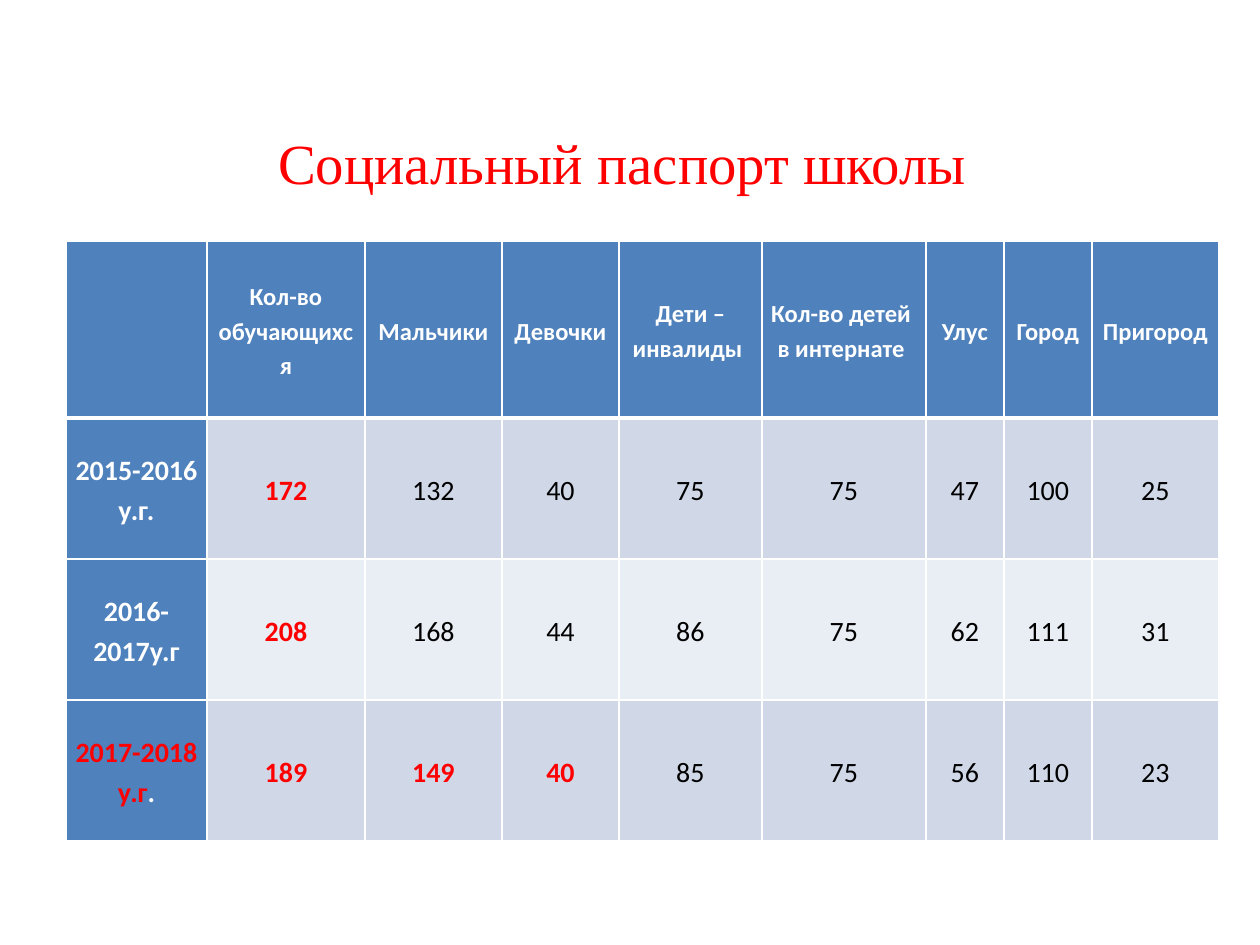
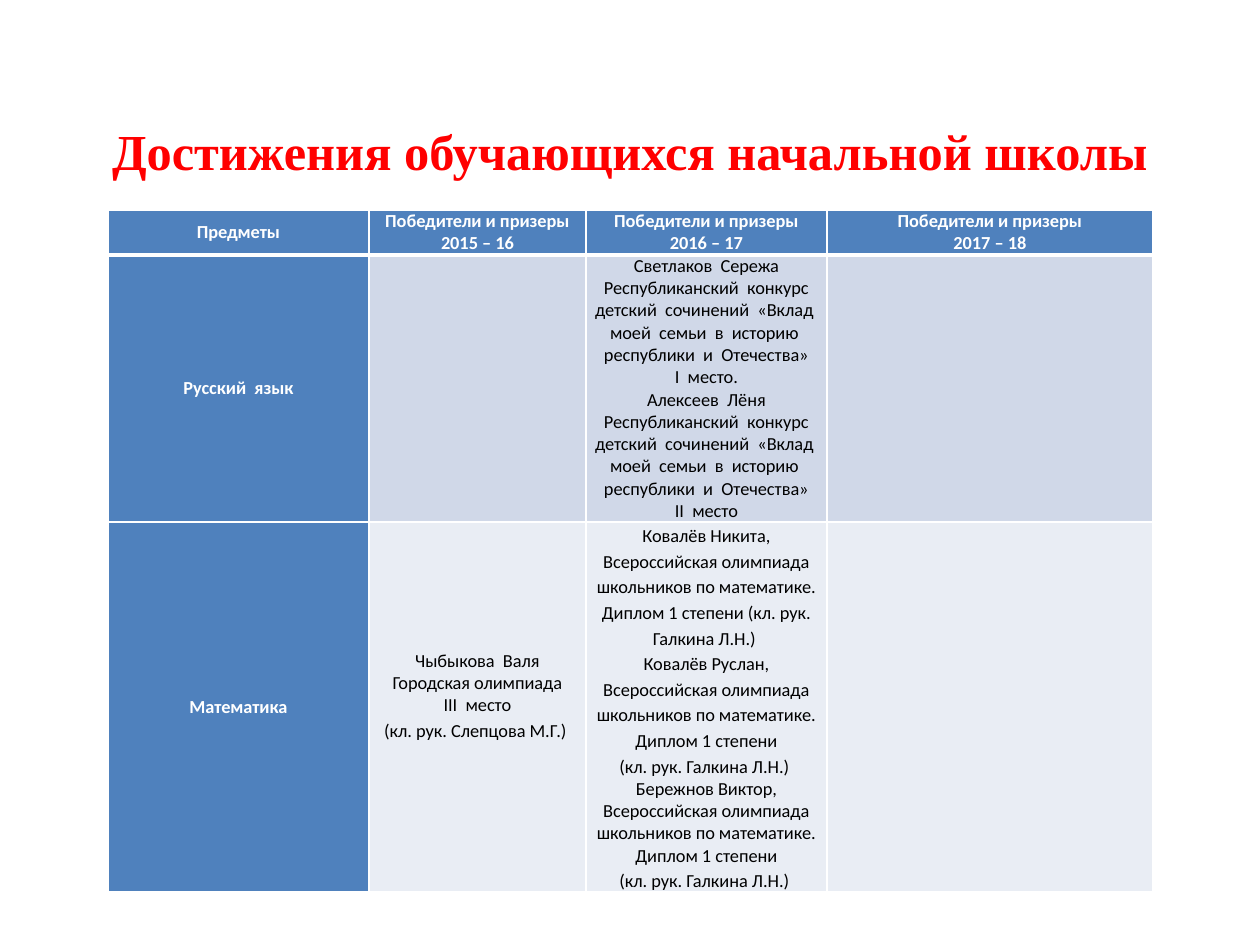
from dataclasses import dataclass
from pptx import Presentation
from pptx.dml.color import RGBColor
from pptx.enum.text import MSO_ANCHOR as Anchor, PP_ALIGN as Align
from pptx.oxml import parse_xml
from pptx.oxml.ns import nsdecls
from pptx.util import Emu, Pt

PX = 914400 / 126
RED, WHITE, BLACK, BLUE = "FF0000", "FFFFFF", "000000", "4F81BD"
BANDS = ("D0D8E8", "E9EDF4")
CELL_INSET = 8
THIN, THICK = 1, 3
LOOSE = 1.15


@dataclass
class Line:
    """One paragraph of a table cell."""
    text: str
    spacing: float = 1.0
    color: str = ""


def px(length):
    """Turn px into EMU."""
    return Emu(round(length * PX))


def rgb(value):
    """Turn a hex string into a colour."""
    return RGBColor.from_string(value)


def write(paragraph, text, *, size, color, bold=False, font="Calibri", spacing=1.0):
    """Add a centred, formatted run to a paragraph."""
    paragraph.alignment = Align.CENTER
    paragraph.line_spacing = spacing
    run = paragraph.add_run()
    run.text = text
    run.font.name, run.font.size, run.font.bold = font, Pt(size), bold
    run.font.color.rgb = rgb(color)


def add_title(slide, box, text, **style):
    """Place the red slide title in its box."""
    frame = slide.shapes.add_textbox(*map(px, box)).text_frame
    frame.word_wrap = True
    frame.vertical_anchor = Anchor.MIDDLE
    frame.margin_left = frame.margin_right = frame.margin_top = frame.margin_bottom = 0
    write(frame.paragraphs[0], text, color=RED, font="Times New Roman", **style)


def set_borders(cell, top, bottom):
    """Draw white rules round a cell."""
    properties = cell._tc.get_or_add_tcPr()
    widths = {"L": THIN, "R": THIN, "T": top, "B": bottom}
    for index, (side, width) in enumerate(widths.items()):
        properties.insert(index, parse_xml(
            f'<a:ln{side} {nsdecls("a")} w="{Pt(width)}"><a:solidFill>'
            f'<a:srgbClr val="{WHITE}"/></a:solidFill></a:ln{side}>'))


def add_school_table(slide, origin, columns, heights, rows, header_size, body_size):
    """Build a table with a blue header row, blue first column and banded body."""
    left, top = origin
    table = slide.shapes.add_table(
        len(rows), len(columns), px(left), px(top), px(sum(columns)), px(sum(heights))).table
    for column, width in zip(table.columns, columns):
        column.width = px(width)
    for row, height in zip(table.rows, heights):
        row.height = px(height)
    for r, row in enumerate(rows):
        for c, lines in enumerate(row):
            cell = table.cell(r, c)
            heading = r == 0 or c == 0
            cell.vertical_anchor = Anchor.MIDDLE
            cell.margin_left = cell.margin_right = px(CELL_INSET)
            cell.margin_top = cell.margin_bottom = 0
            cell.fill.solid()
            cell.fill.fore_color.rgb = rgb(BLUE if heading else BANDS[(r - 1) % 2])
            set_borders(cell, THICK if r == 1 else THIN, THICK if r == 0 else THIN)
            for index, line in enumerate(lines):
                frame = cell.text_frame
                paragraph = frame.add_paragraph() if index else frame.paragraphs[0]
                write(paragraph, line.text, size=body_size if r else header_size,
                      color=line.color or (WHITE if heading else BLACK),
                      bold=heading or line.color == RED, spacing=line.spacing)
    return table


def passport_slide(slide):
    """Show the pupil numbers of three school years."""
    add_title(slide, (55, 122, 1134, 80), "Социальный паспорт школы", size=32.4)
    headings = ["", "Кол-во обучающихся", "Мальчики", "Девочки", "Дети –инвалиды ",
                "Кол-во детей  в интернате ", "Улус", "Город", "Пригород"]
    years = [
        ["2015-2016 у.г.", 172, 132, 40, 75, 75, 47, 100, 25],
        ["2016-2017у.г", 208, 168, 44, 86, 75, 62, 111, 31],
        ["2017-2018 у.г", 189, 149, 40, 85, 75, 56, 110, 23],
    ]
    red_cells = {(1, 1), (2, 1), (3, 0), (3, 1), (3, 2), (3, 3)}
    rows = [[[Line(str(value), LOOSE, RED if (r, c) in red_cells else "")] if value else []
             for c, value in enumerate(row)] for r, row in enumerate([headings, *years])]
    table = add_school_table(slide, (66, 241), [141, 158, 137, 117, 143, 164, 78, 88, 127],
                             [177, 141, 141, 141], rows, 14, 16)
    last_year = table.cell(3, 0).text_frame.paragraphs[0]
    write(last_year, ".", size=16, color=WHITE, bold=True, spacing=LOOSE)


def achievements_slide(slide):
    """Show the prize winners by subject and year."""
    add_title(slide, (63, 110, 1134, 80), "Достижения обучающихся начальной школы",
              size=28.8, bold=True)
    headings = [[Line("Предметы")]] + [
        [Line("Победители и призеры"), Line(f"{year} – {year % 100 + 1}")]
        for year in (2015, 2016, 2017)]
    essay = ("Республиканский  конкурс детский  сочинений  «Вклад  моей  семьи  "
             "в  историю  республики  и  Отечества»")
    olympiad = "Всероссийская олимпиада школьников по математике. Диплом 1 степени"
    teacher = "(кл. рук. Галкина Л.Н.)"
    essay_winners = [Line(text) for text in (
        "Светлаков  Сережа", essay, "I  место.", "Алексеев  Лёня", essay, "II  место")]
    city_winner = [Line("Чыбыкова  Валя"), Line("Городская олимпиада"), Line("III  место"),
                   Line("(кл. рук. Слепцова М.Г.) ", LOOSE)]
    olympiad_winners = [
        Line(f"Ковалёв Никита, {olympiad} {teacher} ", LOOSE),
        Line(f"Ковалёв Руслан, {olympiad}", LOOSE), Line(f"{teacher} ", LOOSE),
        Line(f"Бережнов Виктор, {olympiad}"), Line(f"{teacher} ", LOOSE)]
    rows = [headings,
            [[Line("Русский  язык")], [], essay_winners, []],
            [[Line("Математика")], city_winner, olympiad_winners, []]]
    table = add_school_table(slide, (108, 210), [261, 217, 241, 326], [45, 267, 370],
                             rows, 10.5, 10.5)
    table.cell(2, 1).margin_bottom = px(22)


def main():
    """Build and save the presentation."""
    deck = Presentation()
    deck.slide_width, deck.slide_height = px(1260), px(945)
    for build in (passport_slide, achievements_slide):
        build(deck.slides.add_slide(deck.slide_layouts[6]))
    deck.save("out.pptx")


if __name__ == "__main__":
    main()
